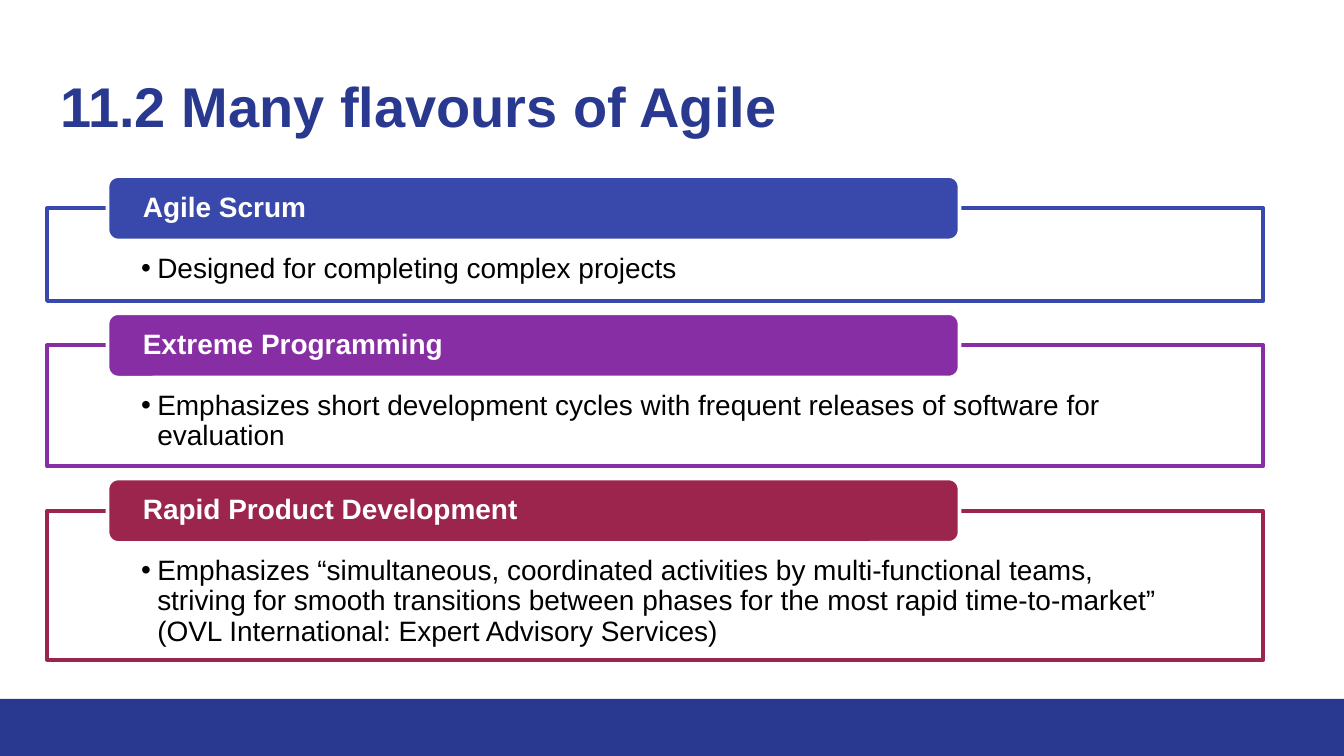
from lxml import etree
from pptx import Presentation
from pptx.dml.color import RGBColor
from pptx.enum.shapes import MSO_SHAPE
from pptx.enum.text import MSO_ANCHOR, PP_ALIGN
from pptx.oxml.ns import qn
from pptx.util import Inches, Pt

RECTANGLE = MSO_SHAPE.RECTANGLE
ROUNDED = MSO_SHAPE.ROUNDED_RECTANGLE
TOP = MSO_ANCHOR.TOP
MIDDLE = MSO_ANCHOR.MIDDLE
LEFT = PP_ALIGN.LEFT

NAVY = RGBColor(0x2A, 0x39, 0x90)
BLUE = RGBColor(0x39, 0x49, 0xAB)
PURPLE = RGBColor(0x88, 0x2E, 0xA4)
CRIMSON = RGBColor(0x9C, 0x25, 0x4D)
WHITE = RGBColor(0xFF, 0xFF, 0xFF)
BLACK = RGBColor(0, 0, 0)

FONT = "Arial"
FIRST_PANEL_TOP = 1.55
PANEL_GAP = 0.33
HEADER_RISE = 0.24

FLAVOURS = [
    ("Agile Scrum", "Designed for completing complex projects", BLUE, 0.69),
    (
        "Extreme Programming",
        "Emphasizes short development cycles with frequent releases of "
        "software for evaluation",
        PURPLE,
        0.9,
    ),
    (
        "Rapid Product Development",
        "Emphasizes “simultaneous, coordinated activities by multi-functional "
        "teams, striving for smooth transitions between phases for the most "
        "rapid time-to-market” (OVL International: Expert Advisory Services)",
        CRIMSON,
        1.11,
    ),
]


def add_block(page, kind, place, fill, line=None):
    block = page.shapes.add_shape(kind, *map(Inches, place))
    block.shadow.inherit = False
    block.fill.solid()
    block.fill.fore_color.rgb = fill
    if line is None:
        block.line.fill.background()
    else:
        block.line.color.rgb = line
        block.line.width = Pt(2)
    return block


def write_text(box, text, size, color, bold, insets, anchor):
    frame = box.text_frame
    frame.word_wrap = True
    frame.vertical_anchor = anchor
    left, top, right, bottom = map(Inches, insets)
    frame.margin_left, frame.margin_top = left, top
    frame.margin_right, frame.margin_bottom = right, bottom
    para = frame.paragraphs[0]
    para.alignment = LEFT
    span = para.add_run()
    span.text = text
    span.font.name = FONT
    span.font.size = Pt(size)
    span.font.bold = bold
    span.font.color.rgb = color
    return para


def set_bullet(para):
    properties = para._p.get_or_add_pPr()
    properties.set("marL", str(Inches(0.12)))
    properties.set("indent", str(-Inches(0.12)))
    tint = etree.SubElement(properties, qn("a:buClr"))
    etree.SubElement(tint, qn("a:srgbClr")).set("val", str(BLACK))
    etree.SubElement(properties, qn("a:buFont")).set("typeface", FONT)
    etree.SubElement(properties, qn("a:buChar")).set("char", "•")


def set_opacity(block, percent):
    color = block.fill._xPr.find(qn("a:solidFill"))[0]
    alpha = etree.SubElement(color, qn("a:alpha"))
    alpha.set("val", str(percent * 1000))


def add_title(page, text):
    box = page.shapes.add_textbox(
        Inches(0.35), Inches(0.43), Inches(9.05), Inches(0.66)
    )
    write_text(box, text, 30, NAVY, True, (0.1, 0.1, 0.1, 0.1), TOP)


def add_flavour(page, top, name, description, color, height):
    panel = add_block(page, RECTANGLE, (0.35, top, 9.05, height), WHITE, color)
    set_opacity(panel, 90)
    para = write_text(
        panel, description, 15, BLACK, False, (0.7, 0.34, 0.7, 0.12), TOP
    )
    para.line_spacing = 0.9
    set_bullet(para)

    place = (0.8, top - HEADER_RISE, 6.34, 0.48)
    header = add_block(page, ROUNDED, place, color, WHITE)
    para = write_text(header, name, 15, WHITE, True, (0.24, 0, 0.24, 0), MIDDLE)
    para.line_spacing = 0.9


def main():
    deck = Presentation()
    deck.slide_width = Inches(10)
    deck.slide_height = deck.slide_width * 9 // 16
    page = deck.slides.add_slide(deck.slide_layouts[6])

    add_block(page, RECTANGLE, (0, 5.2, 10, 0.43), NAVY)
    add_title(page, "11.2 Many flavours of Agile")
    top = FIRST_PANEL_TOP
    for name, description, color, height in FLAVOURS:
        add_flavour(page, top, name, description, color, height)
        top += height + PANEL_GAP

    deck.save("out.pptx")


if __name__ == "__main__":
    main()
